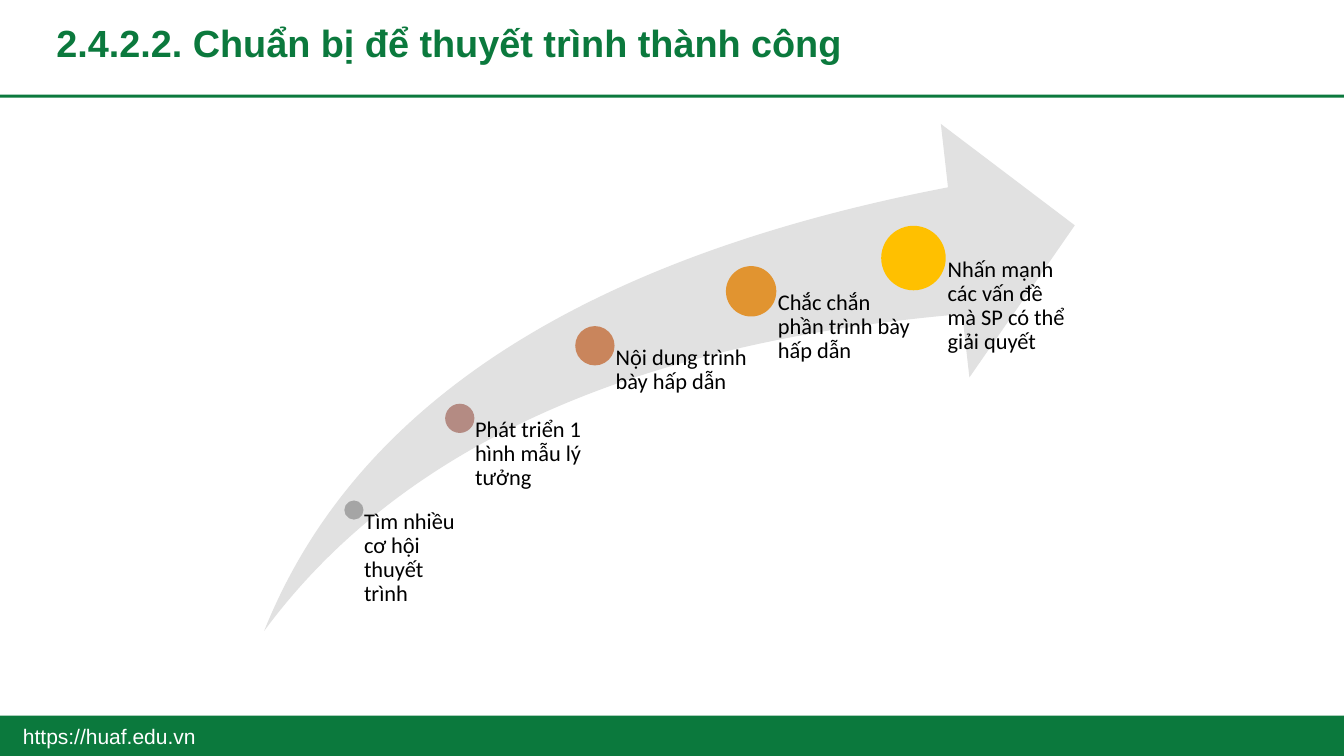
from dataclasses import dataclass

from pptx import Presentation
from pptx.dml.color import RGBColor
from pptx.enum.shapes import MSO_SHAPE
from pptx.enum.text import MSO_ANCHOR, MSO_AUTO_SIZE, PP_ALIGN
from pptx.util import Inches, Pt

RECT, OVAL, SWOOSH = MSO_SHAPE.RECTANGLE, MSO_SHAPE.OVAL, MSO_SHAPE.SWOOSH_ARROW
TOP, MIDDLE, BOTTOM = MSO_ANCHOR.TOP, MSO_ANCHOR.MIDDLE, MSO_ANCHOR.BOTTOM
LEFT, CENTER = PP_ALIGN.LEFT, PP_ALIGN.CENTER
NO_AUTOFIT = MSO_AUTO_SIZE.NONE


@dataclass(frozen=True)
class Theme:
    green: str = "0B793D"
    arrow: str = "E1E1E1"
    white: str = "FFFFFF"
    black: str = "000000"
    heading_font: str = "Arial"
    label_font: str = "Calibri"
    title_size: float = 27
    label_size: float = 16
    footer_size: float = 15


@dataclass(frozen=True)
class Step:
    x: float
    y: float
    diameter: float
    label_width: float
    color: str
    text: str


THEME = Theme()
SLIDE_W, SLIDE_H = 13.33, 7.5
FOOTER_Y, FOOTER_H = 7.1, 0.4
ARROW_X, ARROW_Y, ARROW_W, ARROW_H = 2.62, 1.23, 8.04, 5.03
INSET_RATIO = 0.53

STEPS = [
    Step(3.51, 5.06, 0.19, 1.05, "A5A5A5", "Tìm nhiều cơ hội thuyết trình"),
    Step(4.56, 4.15, 0.29, 1.34, "B48B83", "Phát triển 1 hình mẫu lý tưởng"),
    Step(5.9, 3.43, 0.39, 1.55, "C9855C", "Nội dung trình bày hấp dẫn"),
    Step(7.45, 2.89, 0.5, 1.61, "E19430", "Chắc chắn phần trình bày hấp dẫn"),
    Step(9.06, 2.56, 0.64, 1.61, "FFC000",
         "Nhấn mạnh các vấn đề mà SP có thể giải quyết"),
]


def add_filled(s, kind, x: float, y: float, w: float, h: float, color: str):
    sp = s.shapes.add_shape(kind, Inches(x), Inches(y), Inches(w), Inches(h))
    sp.shadow.inherit = False
    sp.fill.solid()
    sp.fill.fore_color.rgb = RGBColor.from_string(color)
    sp.line.fill.background()
    return sp


def write_text(sp, text: str, *, size: float, font: str, color: str,
               bold: bool = False, align=LEFT, anchor=TOP,
               spacing: float = 1.0, insets=(0.1, 0.05, 0.1, 0.05)) -> None:
    tf = sp.text_frame
    tf.word_wrap = True
    tf.auto_size = NO_AUTOFIT
    tf.vertical_anchor = anchor
    tf.margin_left, tf.margin_top, tf.margin_right, tf.margin_bottom = map(Inches, insets)
    p = tf.paragraphs[0]
    p.alignment = align
    p.line_spacing = spacing
    r = p.add_run()
    r.text = text
    r.font.size = Pt(size)
    r.font.name = font
    r.font.bold = bold
    r.font.color.rgb = RGBColor.from_string(color)


def add_text_box(s, x: float, y: float, w: float, h: float, text: str, **style) -> None:
    sp = s.shapes.add_textbox(Inches(x), Inches(y), Inches(w), Inches(h))
    write_text(sp, text, **style)


def add_step(s, step: Step) -> None:
    radius = step.diameter / 2
    add_filled(s, OVAL, step.x - radius, step.y - radius,
               step.diameter, step.diameter, step.color)
    add_text_box(s, step.x, step.y, step.label_width, ARROW_Y + ARROW_H - step.y,
                 step.text, size=THEME.label_size, font=THEME.label_font,
                 color=THEME.black, spacing=0.9,
                 insets=(step.diameter * INSET_RATIO, 0, 0, 0))


def add_title(s, text: str) -> None:
    sp = s.shapes.title
    sp.left, sp.top, sp.width, sp.height = map(Inches, (0.46, 0.18, 12.37, 0.52))
    write_text(sp, text, size=THEME.title_size, font=THEME.heading_font,
               color=THEME.green, bold=True, anchor=BOTTOM, spacing=0.9)


def main() -> None:
    prs = Presentation()
    prs.slide_width, prs.slide_height = Inches(SLIDE_W), Inches(SLIDE_H)
    s = prs.slides.add_slide(prs.slide_layouts.get_by_name("Title Only"))

    add_filled(s, RECT, 0, FOOTER_Y, SLIDE_W, FOOTER_H, THEME.green)
    add_filled(s, RECT, 0, 0.94, SLIDE_W, 0.03, THEME.green)
    arrow = add_filled(s, SWOOSH, ARROW_X, ARROW_Y, ARROW_W, ARROW_H, THEME.arrow)
    arrow.adjustments[0] = arrow.adjustments[1] = 0.25
    for step in STEPS:
        add_step(s, step)
    add_text_box(s, 0, FOOTER_Y, 2.17, FOOTER_H, "https://huaf.edu.vn",
                 size=THEME.footer_size, font=THEME.heading_font,
                 color=THEME.white, align=CENTER, anchor=MIDDLE)
    add_title(s, "2.4.2.2. Chuẩn bị để thuyết trình thành công")
    prs.save("out.pptx")


if __name__ == "__main__":
    main()
